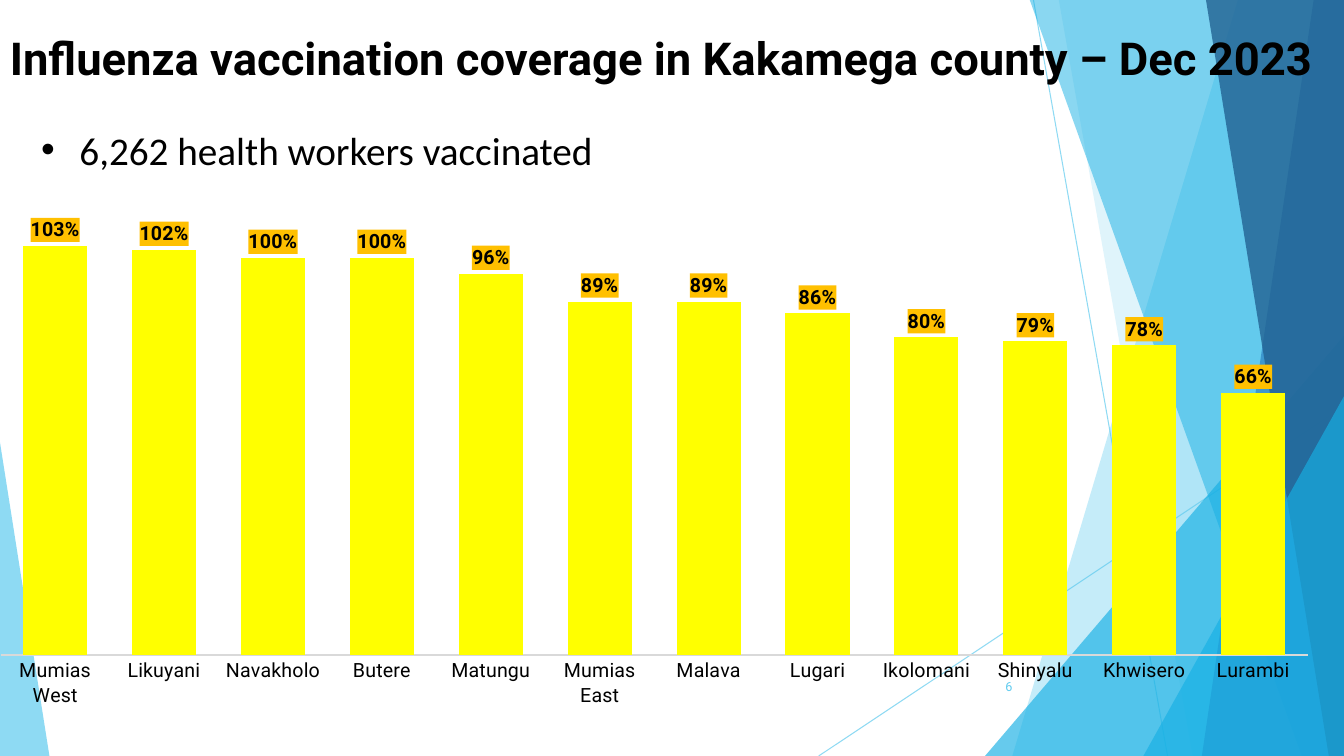
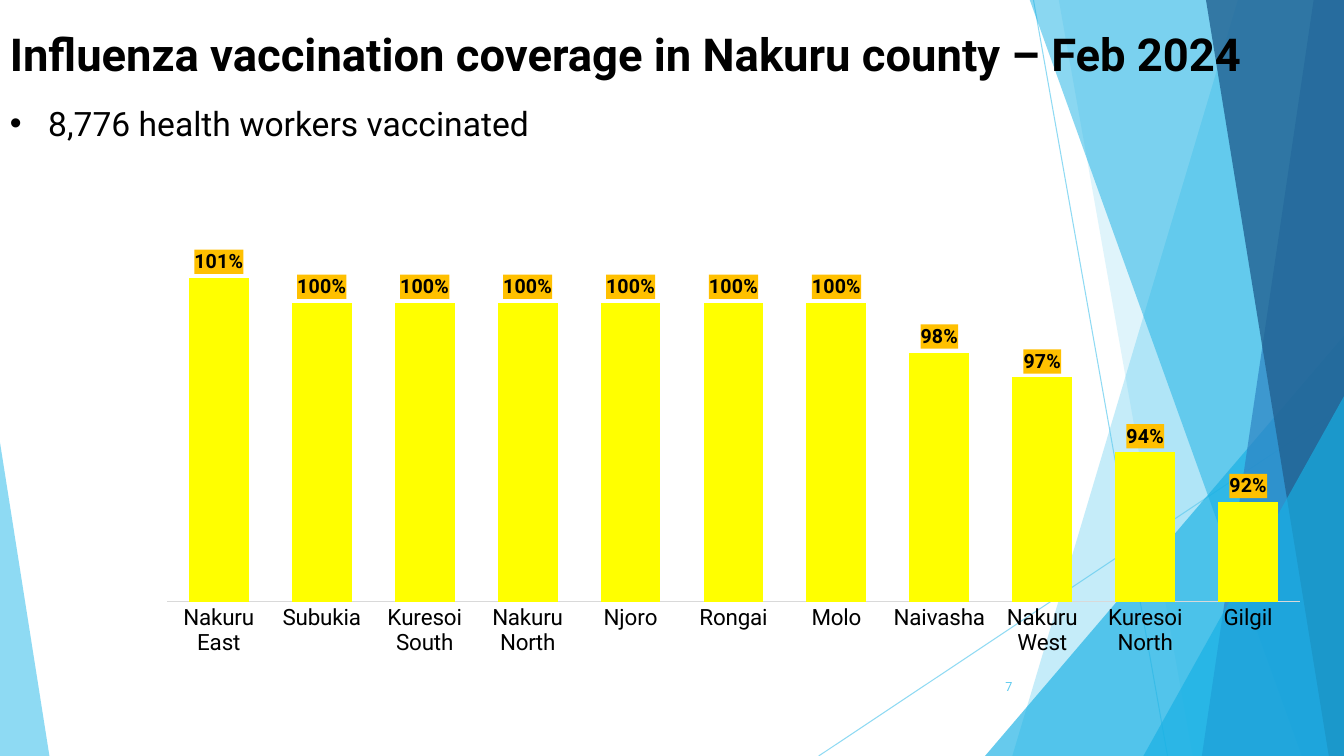
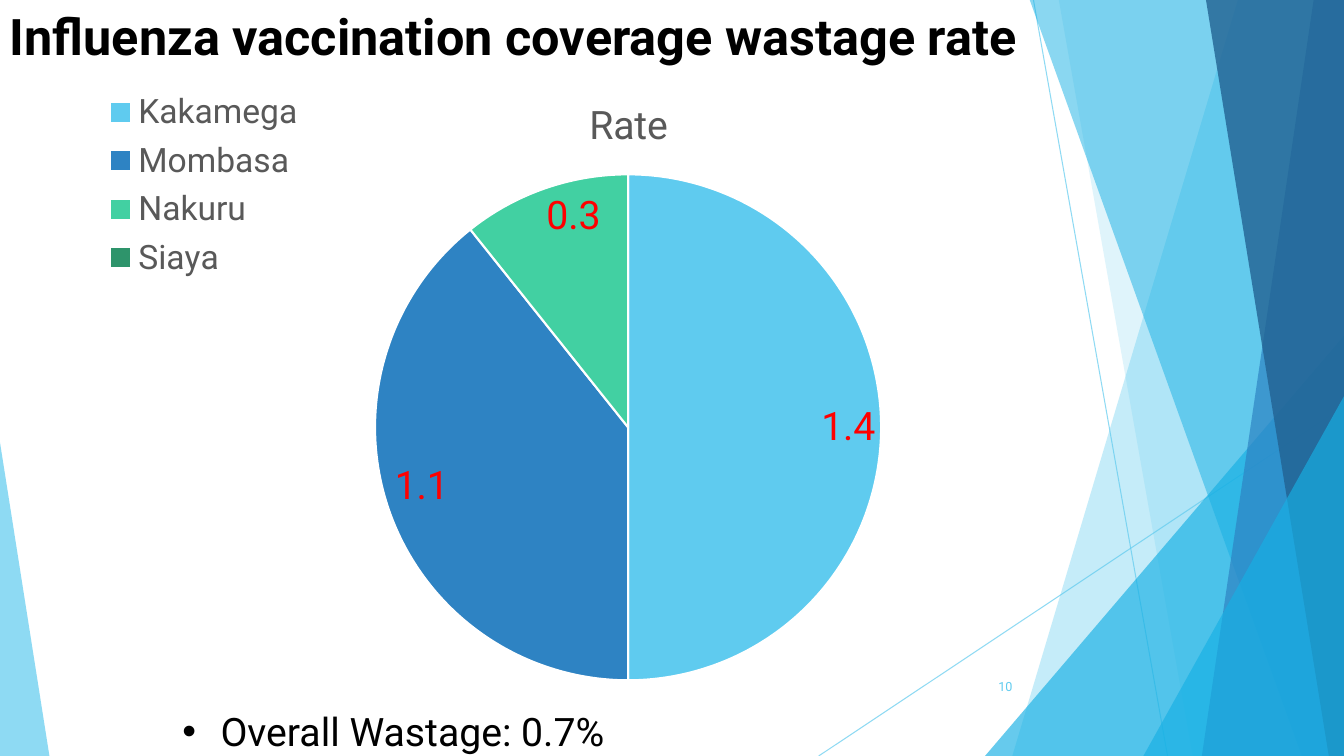
from lxml import etree
from pptx import Presentation
from pptx import util as u
from pptx.chart.data import CategoryChartData
from pptx.dml.color import RGBColor
from pptx.enum import chart as charts, shapes, text
from pptx.oxml import parse_xml
from pptx.oxml.ns import nsdecls, qn

PX = 9144
WIDTH, HEIGHT = 1333, 750
FONT = "Roboto"
COLORS = {
    "black": "000000", "white": "FFFFFF", "sky": "5FCBEF", "cyan": "17B0E4",
    "blue": "2E83C3", "navy": "226292", "mint": "42D0A2", "green": "2E946B",
    "bar": "FFFF00", "tag": "FFC000", "axis": "D9D9D9", "grey": "595959", "red": "FF0000",
}
RGB = {name: RGBColor.from_string(value) for name, value in COLORS.items()}

BACKDROP = [
    ("line", (1025, 0, 1158, 750), "sky", 70),
    ("line", (1333, 403, 812, 750), "sky", 70),
    ("panel", (1228, 1004), "sky", 36),
    ("panel", (1050, 1183), "sky", 20),
    ("triangle", (977, 333, 356, 417, 1), "cyan", 66),
    ("panel", (1021, 1291), "cyan", 50),
    ("panel", (1303, 1192), "blue", 70),
    ("panel", (1196, 1318), "navy", 80),
    ("triangle", (1134, 393, 199, 357, 1), "cyan", 66),
    ("triangle", (0, 439, 49, 311, 0), "sky", 70),
]

PAGES = [
    dict(title="Influenza vaccination coverage in Kakamega county – Dec 2023",
         title_box=(0, 25, 1333, 76), title_size=32.4, number="6",
         note="6,262 health workers vaccinated", note_box=(31, 120, 1231, 57),
         note_format=dict(size=28, font="Calibri")),
    dict(title="Influenza vaccination coverage in Nakuru county – Feb 2024",
         title_box=(0, 21, 1333, 125), title_size=32.4, number="7",
         note="8,776 health workers vaccinated", note_box=(0, 97, 1189, 50),
         note_format=dict(size=24)),
    dict(title="Influenza vaccination coverage wastage rate",
         title_box=(0, 0, 1241, 144), title_size=36, number="10",
         note="Overall Wastage: 0.7%", note_box=(171, 705, 843, 40),
         note_format=dict(size=28, anchor=text.MSO_ANCHOR.MIDDLE)),
]

COVERAGE = [
    dict(box=(0, 177, 1333, 573), plot=(0, 0, 1297, 473), gap=70, overlap=-24,
         label_size=14, axis_width=1, low=0, high=1.2,
         rates={"Mumias West": 1.03, "Likuyani": 1.02, "Navakholo": 1, "Butere": 1,
                "Matungu": 0.96, "Mumias East": 0.89, "Malava": 0.89, "Lugari": 0.86,
                "Ikolomani": 0.8, "Shinyalu": 0.79, "Khwisero": 0.78, "Lurambi": 0.66}),
    dict(box=(44, 147, 1289, 603), plot=(122, 104, 1123, 346), gap=72, overlap=-27,
         label_size=16, axis_width=0.75, low=0.88, high=1.02,
         rates={"Nakuru East": 1.01, "Subukia": 1, "Kuresoi South": 1, "Nakuru North": 1,
                "Njoro": 1, "Rongai": 1, "Molo": 1, "Naivasha": 0.98, "Nakuru West": 0.97,
                "Kuresoi North": 0.94, "Gilgil": 0.92}),
]

WASTAGE_BOX = (37, 72, 1173, 678)
WASTAGE = {"Kakamega": (1.4, "sky"), "Mombasa": (1.1, "blue"),
           "Nakuru": (0.3, "mint"), "Siaya": (0, "green")}


def write(slide, box, words, size, color="black", font=FONT, bold=False, bullet=False,
          align=text.PP_ALIGN.LEFT, anchor=text.MSO_ANCHOR.TOP):
    frame = slide.shapes.add_textbox(*(n * PX for n in box)).text_frame
    frame.word_wrap = True
    frame.vertical_anchor = anchor
    paragraph = frame.paragraphs[0]
    paragraph.alignment = align
    run = paragraph.add_run()
    run.text = words
    style(run.font, size, color, bold, font)
    if bullet:
        properties = paragraph._p.get_or_add_pPr()
        properties.set("marL", str(38 * PX))
        properties.set("indent", str(-38 * PX))
        etree.SubElement(properties, qn("a:buFont"), typeface="Arial")
        etree.SubElement(properties, qn("a:buChar"), char="•")


def style(font, size, color, bold=False, name=FONT):
    font.size = u.Pt(size)
    font.name = name
    font.bold = bold
    font.color.rgb = RGB[color]


deck = Presentation()
deck.slide_width, deck.slide_height = WIDTH * PX, HEIGHT * PX
slides = []

for page in PAGES:
    slide = deck.slides.add_slide(deck.slide_layouts[6])
    slides.append(slide)
    for kind, place, color, opacity in BACKDROP:
        if kind == "line":
            facet = slide.shapes.add_connector(
                shapes.MSO_CONNECTOR.STRAIGHT, *(n * PX for n in place))
            facet.line.color.rgb = RGB[color]
            facet.line.width = u.Pt(0.75)
            etree.SubElement(facet._element.spPr, qn("a:effectLst"))
        else:
            if kind == "panel":
                top_left, bottom_left = place
                outline = slide.shapes.build_freeform(top_left, -1, scale=PX)
                outline.add_line_segments(
                    [(WIDTH, -1), (WIDTH, HEIGHT), (bottom_left, HEIGHT)], close=True)
                facet = outline.convert_to_shape()
            else:
                *box, apex = place
                facet = slide.shapes.add_shape(
                    shapes.MSO_SHAPE.ISOSCELES_TRIANGLE, *(n * PX for n in box))
                facet.adjustments[0] = apex
            facet.fill.solid()
            facet.fill.fore_color.rgb = RGB[color]
            facet.line.fill.background()
            facet.shadow.inherit = False
        tint = next(facet._element.spPr.iter(qn("a:srgbClr")))
        etree.SubElement(tint, qn("a:alpha"), val=str(opacity * 1000))
    write(slide, page["title_box"], page["title"], page["title_size"], bold=True)
    write(slide, (939, 661, 75, 40), page["number"], 9, color="sky",
          align=text.PP_ALIGN.RIGHT, anchor=text.MSO_ANCHOR.MIDDLE)

placements = []

for slide, county in zip(slides, COVERAGE):
    data = CategoryChartData(number_format="0%")
    data.categories = list(county["rates"])
    data.add_series("Series 1", [])
    data.add_series("Series 2", [])
    data.add_series("Series 3", list(county["rates"].values()))
    coverage = slide.shapes.add_chart(
        charts.XL_CHART_TYPE.COLUMN_CLUSTERED, *(n * PX for n in county["box"]), data).chart
    style(coverage.font, 10, "black")
    coverage.has_title = False
    coverage.has_legend = False

    counties = coverage.category_axis
    counties.major_tick_mark = charts.XL_TICK_MARK.NONE
    counties.format.line.color.rgb = RGB["axis"]
    counties.format.line.width = u.Pt(county["axis_width"])
    style(counties.tick_labels.font, county["label_size"], "black")
    scale = coverage.value_axis
    scale.minimum_scale, scale.maximum_scale = county["low"], county["high"]
    scale.has_major_gridlines = False
    scale.visible = False

    bars = coverage.plots[0]
    bars.gap_width = county["gap"]
    bars.overlap = county["overlap"]
    bars.vary_by_categories = False
    for series in bars.series:
        series.format.fill.solid()
        series.format.fill.fore_color.rgb = RGB["bar"]
    bars.has_data_labels = True
    tags = bars.data_labels
    tags.show_value = True
    tags.number_format = "0%"
    tags.number_format_is_linked = False
    tags.position = charts.XL_LABEL_POSITION.OUTSIDE_END
    style(tags.font, 14, "black", bold=True)
    tags._element.find(qn("c:numFmt")).addnext(parse_xml(
        f'<c:spPr {nsdecls("c", "a")}><a:solidFill><a:srgbClr val="{COLORS["tag"]}"/>'
        '</a:solidFill></c:spPr>'))
    placements.append((coverage._chartSpace.chart.plotArea, county["plot"], county["box"]))

data = CategoryChartData(number_format="0.0")
data.categories = list(WASTAGE)
data.add_series("Rate", [rate for rate, color in WASTAGE.values()])
wastage = slides[2].shapes.add_chart(
    charts.XL_CHART_TYPE.PIE, *(n * PX for n in WASTAGE_BOX), data).chart
style(wastage.font, 10, "black")
wastage.has_title = True
heading = wastage.chart_title.text_frame.paragraphs[0].add_run()
heading.text = "Rate"
style(heading.font, 28, "grey")
wastage.has_legend = True
wastage.legend.position = charts.XL_LEGEND_POSITION.LEFT
wastage.legend.include_in_layout = False
style(wastage.legend.font, 24, "grey")
pie = wastage.plots[0]
pie.vary_by_categories = True
for index, (rate, color) in enumerate(WASTAGE.values()):
    slice_format = pie.series[0].points[index].format
    slice_format.fill.solid()
    slice_format.fill.fore_color.rgb = RGB[color]
    slice_format.line.color.rgb = RGB["white"]
    slice_format.line.width = u.Pt(1.5)
pie.has_data_labels = True
rates = pie.data_labels
rates.show_value = True
rates.show_percentage = False
rates.number_format = "0.0;;"
rates.number_format_is_linked = False
rates.position = charts.XL_LABEL_POSITION.INSIDE_END
style(rates.font, 28, "red")
placements.append((wastage._chartSpace.chart.plotArea, (334, 101, 504, 502), WASTAGE_BOX))
placements.append((wastage.legend._element, (48, 11, 235, 201), WASTAGE_BOX))

for part, area, (left, top, width, height) in placements:
    for automatic in part.findall(qn("c:layout")):
        part.remove(automatic)
    layout = etree.Element(qn("c:layout"))
    manual = etree.SubElement(layout, qn("c:manualLayout"))
    is_plot = part.tag == qn("c:plotArea")
    if is_plot:
        etree.SubElement(manual, qn("c:layoutTarget"), val="inner")
    for mode in ("xMode", "yMode"):
        etree.SubElement(manual, qn(f"c:{mode}"), val="edge")
    for side, length, whole in zip("xywh", area, (width, height) * 2):
        etree.SubElement(manual, qn(f"c:{side}"), val=str(length / whole))
    part.insert(0 if is_plot else 1, layout)

for slide, page in zip(slides, PAGES):
    write(slide, page["note_box"], page["note"], bullet=True, **page["note_format"])

deck.save("out.pptx")
